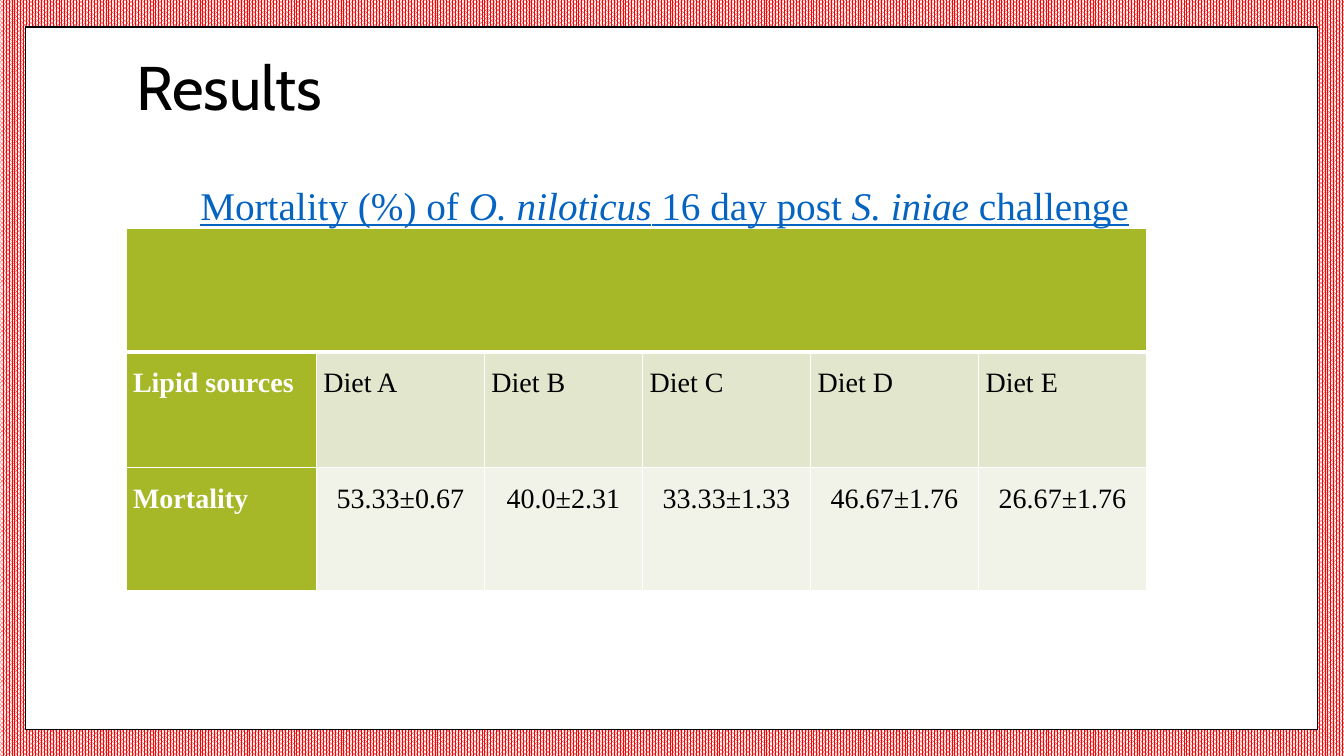
from lxml.etree import SubElement
from pptx import Presentation
from pptx.dml.color import RGBColor
from pptx.enum.dml import MSO_PATTERN
from pptx.enum.shapes import MSO_SHAPE
from pptx.enum.text import MSO_ANCHOR, MSO_AUTO_SIZE, PP_ALIGN
from pptx.oxml.ns import qn
from pptx.util import Inches, Pt

WIDE, HIGH = 13.33, 7.5
COLS, ROWS = 48, 27
SERIF = "Times New Roman"
GREEN, WHITE, BLACK = "A6B727", "FFFFFF", "000000"
BANDS = [GREEN, "E1E6CD", "F1F3E8"]
DIETS = [
    ["Lipid sources", "Diet A", "Diet B", "Diet C", "Diet D", "Diet E"],
    ["Mortality", "53.33±0.67", "40.0±2.31", "33.33±1.33", "46.67±1.76", "26.67±1.76"],
]


def color(code):
    return RGBColor.from_string(code)


def across(cols):
    return Inches(cols * WIDE / COLS)


def down(rows):
    return Inches(rows * HIGH / ROWS)


def place(left, top, width, height):
    """Turn grid columns and rows into slide lengths."""
    return across(left), down(top), across(width), down(height)


def ink(run, size, code, face=SERIF, bold=False):
    font = run.font
    font.size, font.name, font.bold = Pt(size), face, bold
    font.color.rgb = color(code)


def edge(cell, side, points):
    """Draw one white border; call before the cell is filled."""
    line = SubElement(cell._tc.get_or_add_tcPr(), qn(f"a:ln{side}"), w=str(Pt(points)))
    fill = SubElement(line, qn("a:solidFill"))
    SubElement(fill, qn("a:srgbClr"), val=WHITE)


class Page:
    def __init__(self, deck):
        self.slide = deck.slides.add_slide(deck.slide_layouts[5])
        self.shapes = self.slide.shapes

    def backdrop(self, fore, back):
        fill = self.slide.background.fill
        fill.patterned()
        fill.pattern = MSO_PATTERN.PERCENT_80
        fill.fore_color.rgb = color(fore)
        fill.back_color.rgb = color(back)

    def frame(self, *box):
        """Add the white panel behind everything else."""
        panel = self.shapes.add_shape(MSO_SHAPE.RECTANGLE, *place(*box))
        panel.shadow.inherit = False
        panel.fill.solid()
        panel.fill.fore_color.rgb = color(WHITE)
        panel.line.color.rgb = color(BLACK)
        panel.line.width = Pt(1)
        self.shapes._spTree.insert(2, panel._element)

    def title(self, text, *box):
        head = self.shapes.title
        head.left, head.top, head.width, head.height = place(*box)
        frame = head.text_frame
        frame.text = text
        frame.vertical_anchor = MSO_ANCHOR.MIDDLE
        para = frame.paragraphs[0]
        para.alignment, para.line_spacing = PP_ALIGN.LEFT, 0.9
        ink(para.runs[0], 44, BLACK, "Cabin")

    def caption(self, parts, *box):
        """Add an underlined line; every second part is italic."""
        frame = self.shapes.add_textbox(*place(*box)).text_frame
        frame.word_wrap = False
        frame.auto_size = MSO_AUTO_SIZE.SHAPE_TO_FIT_TEXT
        para = frame.paragraphs[0]
        para.alignment, para.line_spacing = PP_ALIGN.JUSTIFY, 2.0
        para.space_after = Pt(8)
        for i, part in enumerate(parts):
            run = para.add_run()
            run.text = part
            ink(run, 28, "0563C1")
            run.font.underline, run.font.italic = True, i % 2 == 1

    def table(self, data, widths, heights, left, top):
        """Add a table with a blank merged band above the data."""
        box = place(left, top, sum(widths), sum(heights))
        grid = self.shapes.add_table(len(heights), len(widths), *box).table
        grid.first_row = grid.horz_banding = False
        for col, width in zip(grid.columns, widths):
            col.width = across(width)
        for row, height in zip(grid.rows, heights):
            row.height = down(height)
        for r in range(len(heights)):
            for c in range(len(widths)):
                cell = grid.cell(r, c)
                for side in "LRTB":
                    thick = (r, side) in [(0, "B"), (1, "T")]
                    edge(cell, side, 3 if thick else 1)
                cell.fill.solid()
                cell.fill.fore_color.rgb = color(BANDS[r] if c else GREEN)
                if r:
                    self.entry(cell, data[r - 1][c], c == 0, r == 2 and c > 0)
        grid.cell(0, 0).merge(grid.cell(0, len(widths) - 1))

    def entry(self, cell, text, label, middle):
        cell.margin_left = cell.margin_right = Inches(0.07)
        cell.margin_top = cell.margin_bottom = 0
        cell.text_frame.text = text
        para = cell.text_frame.paragraphs[0]
        para.line_spacing = 1.5
        para.alignment = PP_ALIGN.CENTER if middle else PP_ALIGN.LEFT
        ink(para.runs[0], 20, WHITE if label else BLACK, bold=label)


def main():
    deck = Presentation()
    deck.slide_width, deck.slide_height = Inches(WIDE), Inches(HIGH)
    page = Page(deck)
    page.backdrop("FF0000", WHITE)
    page.frame(0.9, 0.97, 46.15, 25.09)
    page.title("Results", 4.5, 0.58, 38.88, 5.33)
    page.table(DIETS, [6.8, 6, 5.65, 6, 6, 6], [4.39, 4.14, 4.39], 4.5, 8.17)
    parts = ["Mortality (%) of ", "O. niloticus", " 16 day post ", "S. iniae", " challenge"]
    page.caption(parts, 6.8, 4.61, 34.24, 3.74)
    deck.save("out.pptx")


if __name__ == "__main__":
    main()
